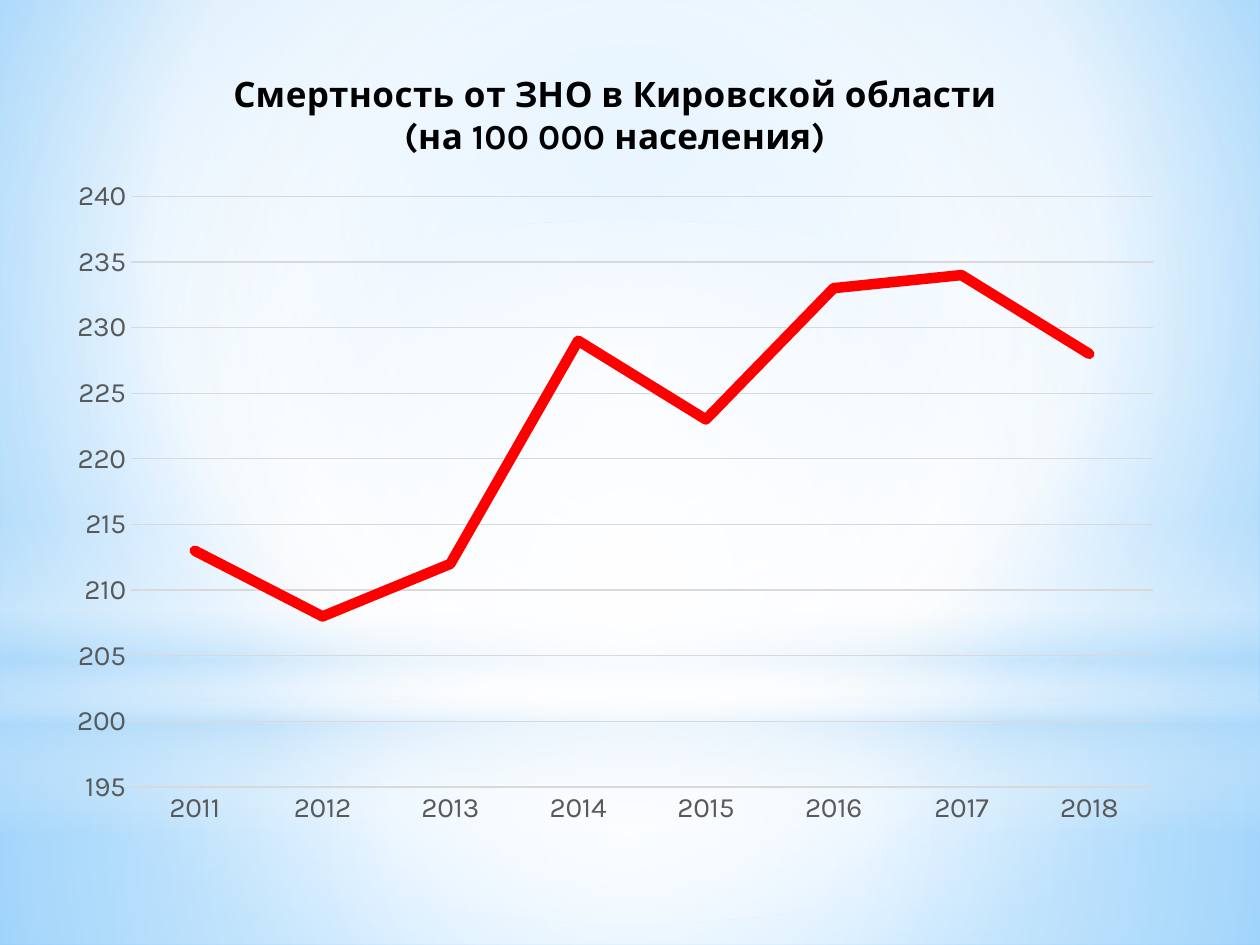
from typing import NamedTuple

from lxml import etree
from pptx import Presentation
from pptx import util as u
from pptx.chart.data import CategoryChartData
from pptx.dml.color import RGBColor
from pptx.enum import chart as charts, shapes
from pptx.oxml import parse_xml
from pptx.oxml.ns import nsdecls, qn

WHITE = RGBColor(0xFF, 0xFF, 0xFF)
BLACK = RGBColor(0, 0, 0)
RED = RGBColor(0xFF, 0, 0)
GREY_TEXT = RGBColor(0x59, 0x59, 0x59)
GREY_LINE = RGBColor(0xD9, 0xD9, 0xD9)
SKY = RGBColor(0x9E, 0xD5, 0xFF)
DEEP_SKY = RGBColor(0x5B, 0xB9, 0xFF)
PALE_BLUE = RGBColor(0xB4, 0xDC, 0xFA)
FONT = "Karla"
WIDTH, HEIGHT = 25.4, 19.05

TITLE_LINES = ("Смертность от ЗНО в Кировской области", "(на 100 000 населения)")
MORTALITY = {
    "2011": 213, "2012": 208, "2013": 212, "2014": 229,
    "2015": 223, "2016": 233, "2017": 234, "2018": 228,
}


class Stop(NamedTuple):
    position: int
    color: RGBColor
    opacity: int = 100


class Gradient(NamedTuple):
    """A circular gradient around focus (left, top, right, bottom), or a vertical one."""
    stops: tuple[Stop, ...]
    focus: tuple[int, int, int, int] | None = (50, 50, 50, 50)


class Glow(NamedTuple):
    kind: shapes.MSO_SHAPE
    top: float
    height: float
    gradient: Gradient


BACKGROUND = Gradient((Stop(0, SKY), Stop(60, WHITE), Stop(100, DEEP_SKY)), (20, 10, 20, 60))
GLOWS = (
    Glow(shapes.MSO_SHAPE.RECTANGLE, 14.17, 4.88, Gradient(
        (Stop(0, WHITE, 91), Stop(37, WHITE, 76), Stop(100, PALE_BLUE, 79)))),
    Glow(shapes.MSO_SHAPE.RECTANGLE, 0, 14.17, Gradient(
        (Stop(0, WHITE, 89), Stop(48, WHITE, 62), Stop(100, PALE_BLUE, 79)))),
    Glow(shapes.MSO_SHAPE.RECTANGLE, 10.46, 6.35, Gradient(
        (Stop(0, WHITE, 0), Stop(29, WHITE, 30), Stop(45, PALE_BLUE, 40),
         Stop(55, WHITE, 26), Stop(65, PALE_BLUE, 60), Stop(100, WHITE, 0)), None)),
    Glow(shapes.MSO_SHAPE.OVAL, 4.45, 14.17, Gradient(
        (Stop(0, WHITE), Stop(56, WHITE, 0)))),
)


def apply_gradient(fill, element, gradient: Gradient) -> None:
    """Give the fill found inside element the stops and direction of gradient."""
    stops = "".join(
        f'<a:gs pos="{stop.position * 1000}"><a:srgbClr val="{stop.color}">'
        f'<a:alpha val="{stop.opacity * 1000}"/></a:srgbClr></a:gs>'
        for stop in gradient.stops)
    if gradient.focus:
        sides = " ".join(f'{side}="{value * 1000}"' for side, value in zip("ltrb", gradient.focus))
        direction = f'<a:path path="circle"><a:fillToRect {sides}/></a:path>'
    else:
        direction = '<a:lin ang="5400000" scaled="0"/>'
    fill.gradient()
    default = element.xpath(".//a:gradFill")[0]
    default.getparent().replace(default, parse_xml(
        f'<a:gradFill {nsdecls("a")} rotWithShape="1"><a:gsLst>{stops}</a:gsLst>'
        f'{direction}</a:gradFill>'))


def add_glow(slide, glow: Glow) -> None:
    shape = slide.shapes.add_shape(
        glow.kind, 0, u.Cm(glow.top), u.Cm(WIDTH), u.Cm(glow.height))
    shape.shadow.inherit = False
    shape.line.fill.background()
    apply_gradient(shape.fill, shape.element, glow.gradient)


def set_layout(element, index: int, **percentages: float) -> None:
    """Place a chart part by percentages of the chart's size."""
    for old in element.findall(qn("c:layout")):
        element.remove(old)
    layout = etree.Element(qn("c:layout"))
    manual = etree.SubElement(layout, qn("c:manualLayout"))
    if "w" in percentages:
        etree.SubElement(manual, qn("c:layoutTarget")).set("val", "inner")
    for side in "xy":
        etree.SubElement(manual, qn(f"c:{side}Mode")).set("val", "edge")
    for name, value in percentages.items():
        etree.SubElement(manual, qn(f"c:{name}")).set("val", f"{value / 100:.4f}")
    element.insert(index, layout)


def style_font(font, size: int, color: RGBColor, bold: bool = False) -> None:
    font.name = FONT
    font.size = u.Pt(size)
    font.bold = bold
    font.color.rgb = color


def style_line(line, width: float, color: RGBColor) -> None:
    line.width = u.Pt(width)
    line.color.rgb = color


def add_title(chart) -> None:
    chart.has_title = True
    frame = chart.chart_title.text_frame
    for index, line in enumerate(TITLE_LINES):
        paragraph = frame.add_paragraph() if index else frame.paragraphs[0]
        run = paragraph.add_run()
        run.text = line
        style_font(run.font, 20, BLACK, bold=True)
    chart.chart_title.include_in_layout = False
    set_layout(chart.chart_title._element, 1, x=15.65, y=2.9)


def style_axes(chart) -> None:
    for axis in (chart.category_axis, chart.value_axis):
        axis.major_tick_mark = axis.minor_tick_mark = charts.XL_TICK_MARK.NONE
        style_font(axis.tick_labels.font, 16, GREY_TEXT)
    style_line(chart.category_axis.format.line, 0.75, GREY_LINE)
    values = chart.value_axis
    values.minimum_scale, values.maximum_scale, values.major_unit = 195, 240, 5
    values.tick_labels.number_format = "General"
    values.tick_labels.number_format_is_linked = False
    values.format.line.fill.background()
    style_line(values.major_gridlines.format.line, 0.75, GREY_LINE)


def add_mortality_chart(slide) -> None:
    data = CategoryChartData()
    data.categories = list(MORTALITY)
    data.add_series("Series 1", list(MORTALITY.values()))
    chart = slide.shapes.add_chart(
        charts.XL_CHART_TYPE.LINE, u.Cm(1.09), u.Cm(0.91), u.Cm(22.61), u.Cm(16), data).chart
    style_font(chart.font, 10, BLACK)
    chart.has_legend = False
    add_title(chart)
    style_axes(chart)
    plot = chart.plots[0]
    plot.vary_by_categories = False
    series = plot.series[0]
    series.smooth = False
    series.marker.style = charts.XL_MARKER_STYLE.NONE
    style_line(series.format.line, 6, RED)
    series.format.line._get_or_add_ln().set("cap", "rnd")
    set_layout(chart._chartSpace.chart.plotArea, 0, x=6.85, y=19.05, w=91.15, h=74.45)


def main() -> None:
    presentation = Presentation()
    presentation.slide_width, presentation.slide_height = u.Cm(WIDTH), u.Cm(HEIGHT)
    slide = presentation.slides.add_slide(presentation.slide_layouts[6])
    apply_gradient(slide.background.fill, slide.element, BACKGROUND)
    for glow in GLOWS:
        add_glow(slide, glow)
    add_mortality_chart(slide)
    presentation.save("out.pptx")


if __name__ == "__main__":
    main()
